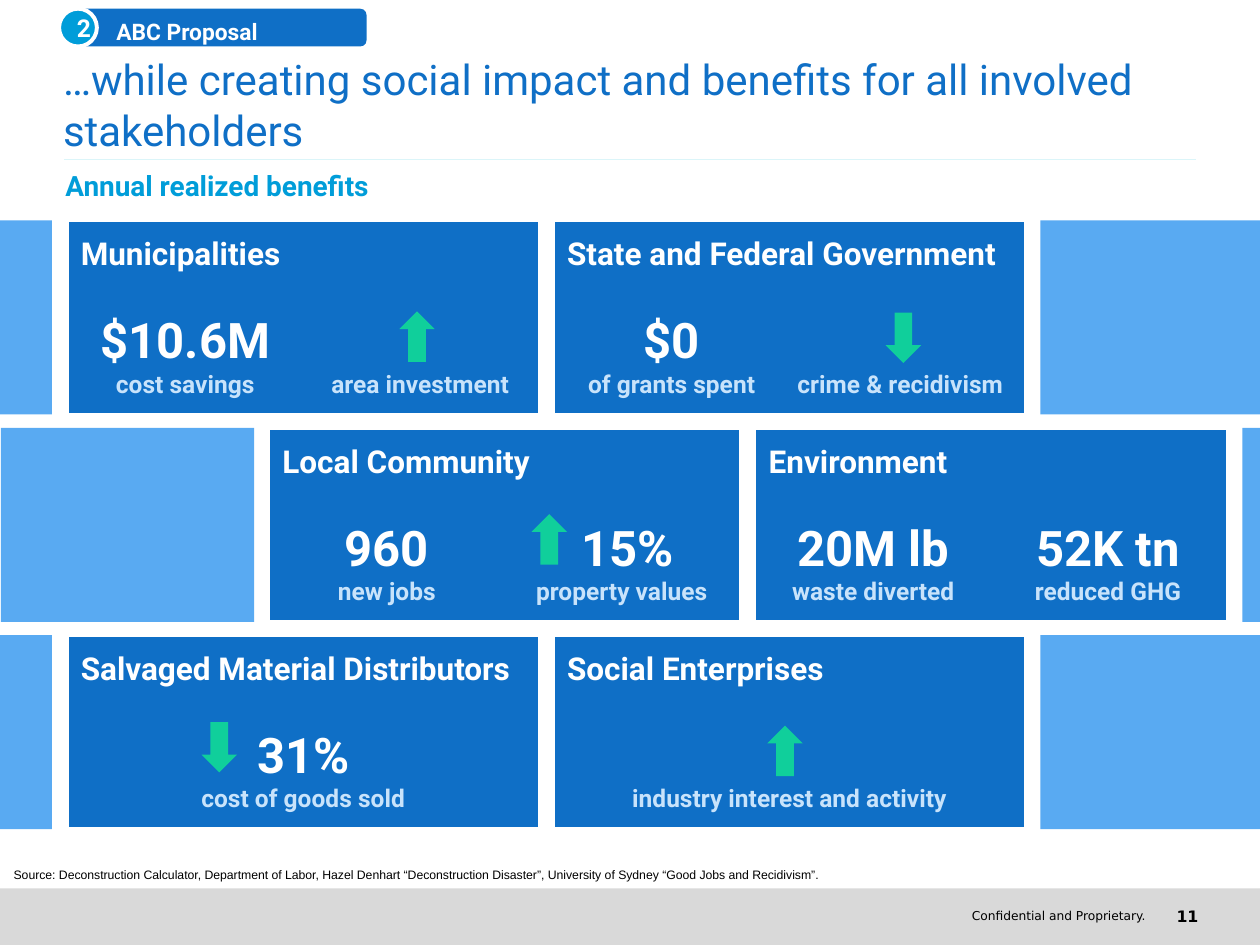
from pptx import Presentation
from pptx.dml.color import RGBColor
from pptx.enum.shapes import MSO_CONNECTOR, MSO_SHAPE
from pptx.enum.text import MSO_ANCHOR, PP_ALIGN
from pptx.oxml.ns import qn
from pptx.util import Pt
from lxml import etree

RECT, ROUND, OVAL = MSO_SHAPE.RECTANGLE, MSO_SHAPE.ROUNDED_RECTANGLE, MSO_SHAPE.OVAL
ARROWS = {"up": MSO_SHAPE.UP_ARROW, "down": MSO_SHAPE.DOWN_ARROW}
LEFT, CENTER, RIGHT = PP_ALIGN.LEFT, PP_ALIGN.CENTER, PP_ALIGN.RIGHT
TOP, MIDDLE, BOTTOM = MSO_ANCHOR.TOP, MSO_ANCHOR.MIDDLE, MSO_ANCHOR.BOTTOM

COLORS = {
    "blue": "0F6FC6", "sky": "59AAF2", "cyan": "009DD9", "green": "10CF9B",
    "pale": "C8E3FB", "white": "FFFFFF", "black": "000000",
    "gray": "D9D9D9", "rule": "DBF5F9",
}

# Brick grid
CARD_W, CARD_H = 270.2, 110.9
COL_PITCH, ROW_PITCH = 277.9, 118.5
ROW_TOP = 126
ROW_LEFTS = [38.2, 153.4, 38.2]
STAT_W, STAT_H = 135.4, 64.1


def rgb(name):
    return RGBColor.from_string(COLORS[name])


def write(tf, text, size=14, color="white", font="Roboto", bold=False,
          align=LEFT, indent=0, new=False):
    """Write one paragraph into a text frame."""
    p = tf.add_paragraph() if new else tf.paragraphs[0]
    p.alignment = align
    if indent:
        p._p.get_or_add_pPr().set("marL", str(Pt(indent)))
    r = p.add_run()
    r.text = text
    r.font.size, r.font.name, r.font.bold = Pt(size), font, bold
    r.font.color.rgb = rgb(color)


class Deck:
    def __init__(self, width, height):
        self.prs = Presentation()
        self.prs.slide_width, self.prs.slide_height = Pt(width), Pt(height)
        self.s = self.prs.slides.add_slide(self.prs.slide_layouts[6])

    def frame(self, sp, ins, anchor, wrap=True):
        tf = sp.text_frame
        tf.word_wrap, tf.vertical_anchor = wrap, anchor
        (tf.margin_left, tf.margin_top,
         tf.margin_right, tf.margin_bottom) = (Pt(v) for v in ins)
        return tf

    def shape(self, kind, x, y, w, h, fill, line=None, width=1,
              ins=(7.2, 3.6, 7.2, 3.6), anchor=MIDDLE):
        sp = self.s.shapes.add_shape(kind, Pt(x), Pt(y), Pt(w), Pt(h))
        sp.shadow.inherit = False
        sp.fill.solid()
        sp.fill.fore_color.rgb = rgb(fill)
        if line:
            sp.line.color.rgb = rgb(line)
            sp.line.width = Pt(width)
        else:
            sp.line.fill.background()
        return self.frame(sp, ins, anchor)

    def box(self, x, y, w, h, ins=(7.2, 3.6, 7.2, 3.6), anchor=TOP, wrap=True):
        sp = self.s.shapes.add_textbox(Pt(x), Pt(y), Pt(w), Pt(h))
        return self.frame(sp, ins, anchor, wrap)

    def rule(self, x1, y1, x2, y2, color, width):
        c = self.s.shapes.add_connector(MSO_CONNECTOR.STRAIGHT,
                                        Pt(x1), Pt(y1), Pt(x2), Pt(y2))
        c.line.color.rgb = rgb(color)
        c.line.width = Pt(width)
        etree.SubElement(c._element.spPr, qn("a:effectLst"))

    def card(self, x, y, title):
        tf = self.shape(RECT, x, y, CARD_W, CARD_H, "blue", "white", 2,
                        ins=(8, 8, 8, 8), anchor=TOP)
        write(tf, title, size=18, bold=True)

    def stat(self, x, y, w, value, label, indent=0, left=7.2):
        tf = self.box(x, y + CARD_H - STAT_H, w, STAT_H,
                      ins=(left, 3.6, 7.2, 9.4), anchor=BOTTOM)
        if value:
            write(tf, value, size=28, bold=True, align=CENTER, indent=indent)
        write(tf, label, color="pale", bold=True, align=CENTER, new=bool(value))

    def arrow(self, x, y, way):
        self.shape(ARROWS[way], x, y, 20.2, 28.8, "green")


# row, column, title, stats (value, label, format), arrow (dx, dy, way)
CARDS = [
    (0, 0, "Municipalities",
     [("$10.6M", "cost savings", {}), ("", "area investment", {})],
     (190, 52, "up")),
    (0, 1, "State and Federal Government",
     [("$0", "of grants spent", {}), ("", "crime & recidivism", {"left": 0})],
     (190, 52.6, "down")),
    (1, 0, "Local Community",
     [("960", "new jobs", {}), ("15%", "property values", {"indent": 7})],
     (150.4, 49.3, "up")),
    (1, 1, "Environment",
     [("20M lb", "waste diverted", {}), ("52K tn", "reduced GHG", {})], None),
    (2, 0, "Salvaged Material Distributors",
     [("31%", "cost of goods sold", {})], (77, 49.6, "down")),
    (2, 1, "Social Enterprises",
     [("", "industry interest and activity", {})], (122.4, 51.7, "up")),
]

# row, left, right of the empty bricks at the slide edges
BRICKS = [(0, 0, 29.7), (0, 594.5, 720), (1, 0.5, 145.2),
          (1, 709.9, 720), (2, 0, 29.7), (2, 594.5, 720)]


def main():
    d = Deck(720, 540)

    # Footer
    d.shape(RECT, 0, 507.6, 720, 32.4, "gray")
    write(d.box(291.6, 515.5, 370, 15.8, ins=(0, 3.6, 7.2, 3.6)),
          "Confidential and Proprietary.", size=7, color="black",
          font="DejaVu Sans", align=RIGHT)
    write(d.box(647.3, 514.8, 44.6, 28.8), "11", size=9, color="black",
          font="DejaVu Sans", bold=True, align=RIGHT)

    # Title and section tag
    d.rule(36.7, 91, 683.3, 91, "rule", 0.5)
    write(d.box(36, 34.6, 647.3, 49.7, ins=(0, 0, 0, 0), anchor=MIDDLE),
          "…while creating social impact and benefits for all involved stakeholders",
          size=24, color="blue")
    write(d.box(0.7, 491.8, 478, 15.8, wrap=False),
          "Source: Deconstruction Calculator, Department of Labor, Hazel Denhart "
          "“Deconstruction Disaster”, University of Sydney “Good Jobs and Recidivism”.",
          size=7, color="black", font="Arial")
    write(d.shape(ROUND, 43.9, 5, 165.6, 21.6, "blue",
                  ins=(21.6, 0, 7.2, 0), anchor=BOTTOM),
          "ABC Proposal", size=13, bold=True)
    write(d.shape(OVAL, 33.8, 5, 21.6, 21.6, "cyan", "white", 2.25),
          "2", bold=True, align=CENTER)
    write(d.box(37.4, 96.5, 663.8, 19.4, ins=(0, 0, 0, 0)),
          "Annual realized benefits", size=16, color="cyan", bold=True)

    # Empty bricks
    for row, left, right in BRICKS:
        d.shape(RECT, left, ROW_TOP + row * ROW_PITCH, right - left, CARD_H, "sky")

    # Stakeholder cards
    for row, col, title, stats, arrow in CARDS:
        x = ROW_LEFTS[row] + col * COL_PITCH
        y = ROW_TOP + row * ROW_PITCH
        d.card(x, y, title)
        w = STAT_W if len(stats) > 1 else CARD_W
        for i, (value, label, fmt) in enumerate(stats):
            d.stat(x + i * 134.2, y, w, value, label, **fmt)
        if arrow:
            dx, dy, way = arrow
            d.arrow(x + dx, y + dy, way)

    d.prs.save("out.pptx")


if __name__ == "__main__":
    main()
